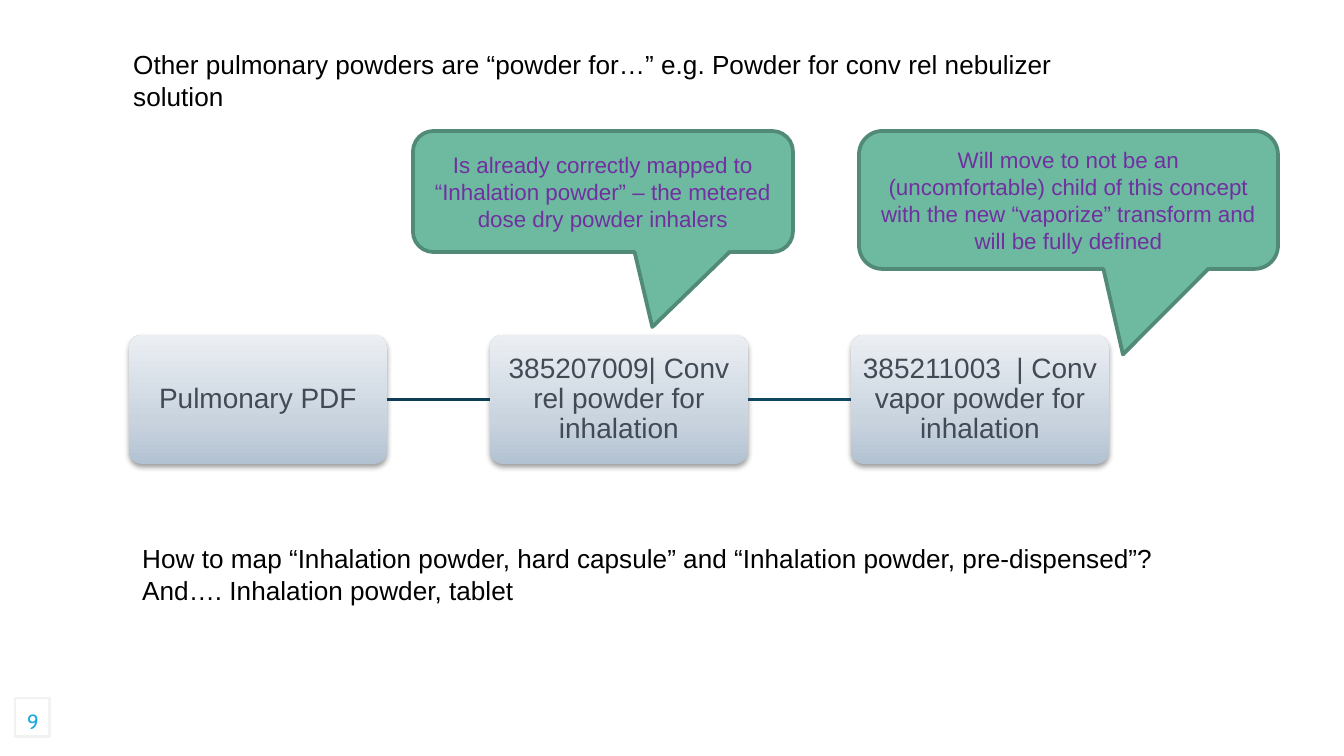
from lxml import etree
from pptx import Presentation
from pptx import util as u
from pptx.dml.color import RGBColor
from pptx.enum import shapes, text
from pptx.oxml import ns, parse_xml

PX = 9144000 / 1344  # EMU per px
WHITE = RGBColor(0xFF, 0xFF, 0xFF)
BLACK = RGBColor(0, 0, 0)
SLATE = RGBColor(0x42, 0x4A, 0x55)
PURPLE = RGBColor(0x70, 0x30, 0xA0)
GREEN = RGBColor(0x6E, 0xBA, 0xA0)
DARK_GREEN = RGBColor(0x51, 0x8A, 0x76)
PALE_GREY = RGBColor(0xF1, 0xF2, 0xF1)
SKY = RGBColor(0x1D, 0xA8, 0xDE)
LINK_COLORS = [RGBColor(0x0E, 0x3E, 0x56), RGBColor(0x10, 0x47, 0x61)]

# Concept chain: equal boxes at an equal pitch
CHAIN = ["Pulmonary PDF",
         "385207009| Conv rel powder for inhalation",
         "385211003\u00a0 | Conv vapor powder for inhalation"]
CHAIN_LEFT, CHAIN_TOP, CHAIN_PITCH = 129, 335, 361
BOX_WIDTH, BOX_HEIGHT = 258, 129
BOX_STOPS = [(0, "B2C2D2"), (35, "CAD4DF"), (100, "EBEFF3")]

CALLOUTS = [
    ((413, 131, 380, 121),
     "Is already correctly mapped to “Inhalation powder” – the metered dose dry powder inhalers"),
    ((859, 131, 419, 138),
     "Will move to not be an (uncomfortable) child of this concept with the new "
     "“vaporize” transform and will be fully defined"),
]
NOTES = [
    ((120, 42, 1043, 78),
     ["Other pulmonary powders are “powder for…” e.g. Powder for conv rel nebulizer solution"]),
    ((129, 536, 1140, 109),
     ["How to map “Inhalation powder, hard capsule” and “Inhalation powder, pre-dispensed”?",
      "And…. Inhalation powder, tablet"]),
]


def px(*lengths):
    return [u.Emu(round(length * PX)) for length in lengths]


def write(shape, lines, size, color, align=text.PP_ALIGN.LEFT, font="Arial",
          anchor=text.MSO_ANCHOR.TOP, insets=None, spacing=None):
    frame = shape.text_frame
    frame.word_wrap = True
    frame.vertical_anchor = anchor
    if insets:
        side, end = px(*insets)
        frame.margin_left = frame.margin_right = side
        frame.margin_top = frame.margin_bottom = end
    frame.text = "\n".join(lines)
    for para in frame.paragraphs:
        para.alignment = align
        if spacing:
            para.line_spacing = spacing
        para.font.name = font
        para.font.size = u.Pt(size)
        para.font.color.rgb = color


def add_panel(page, kind, place, fill=None, line=None, width=0):
    panel = page.shapes.add_shape(kind, *px(*place))
    panel.shadow.inherit = False
    if fill is not None:
        panel.fill.solid()
        panel.fill.fore_color.rgb = fill
    if line is None:
        panel.line.fill.background()
    else:
        panel.line.color.rgb = line
        panel.line.width = u.Pt(width)
    return panel


def add_gradient_and_shadow(box):
    """Upward three-stop gradient and a soft shadow below."""
    stops = "".join(f'<a:gs pos="{pos * 1000}"><a:srgbClr val="{color}"/></a:gs>'
                    for pos, color in BOX_STOPS)
    gradient = parse_xml(f'<a:gradFill {ns.nsdecls("a")} rotWithShape="1"><a:gsLst>{stops}'
                         '</a:gsLst><a:lin ang="16200000" scaled="0"/></a:gradFill>')
    properties = box._element.spPr
    properties.find(ns.qn("a:prstGeom")).addnext(gradient)
    shadow = parse_xml(f'<a:outerShdw {ns.nsdecls("a")} blurRad="{u.Pt(3.1)}" dist="{u.Pt(1.6)}" '
                       'dir="5400000" rotWithShape="0"><a:srgbClr val="000000">'
                       '<a:alpha val="38000"/></a:srgbClr></a:outerShdw>')
    properties.find(ns.qn("a:effectLst")).append(shadow)


def add_concept(page, index, label):
    place = CHAIN_LEFT + index * CHAIN_PITCH, CHAIN_TOP, BOX_WIDTH, BOX_HEIGHT
    box = add_panel(page, shapes.MSO_SHAPE.ROUNDED_RECTANGLE, place)
    box.adjustments[0] = 0.1
    add_gradient_and_shadow(box)
    write(box, [label], 15, SLATE, text.PP_ALIGN.CENTER,
          anchor=text.MSO_ANCHOR.MIDDLE, insets=(2, 2), spacing=0.9)
    return box


def add_link(page, start, end, color):
    link = page.shapes.add_connector(shapes.MSO_CONNECTOR.STRAIGHT, 0, 0, 0, 0)
    link.begin_connect(start, 3)
    link.end_connect(end, 1)
    link.line.color.rgb = color
    link.line.width = u.Pt(2)
    etree.SubElement(link._element.spPr, ns.qn("a:effectLst"))


def add_callout(page, place, label):
    callout = add_panel(page, shapes.MSO_SHAPE.ROUNDED_RECTANGULAR_CALLOUT, place,
                        GREEN, DARK_GREEN, 2)
    for index, value in enumerate((0.13, 1.12, 0.17)):
        callout.adjustments[index] = value
    write(callout, [label], 12, PURPLE, text.PP_ALIGN.CENTER, anchor=text.MSO_ANCHOR.MIDDLE)


def add_note(page, place, lines, size=14, color=BLACK, **style):
    write(page.shapes.add_textbox(*px(*place)), lines, size, color, **style)


def main():
    deck = Presentation()
    deck.slide_width, deck.slide_height = px(1344, 756)
    page = deck.slides.add_slide(deck.slide_layouts[6])

    # Page number
    add_panel(page, shapes.MSO_SHAPE.RECTANGLE, (15, 698, 35, 39), WHITE, PALE_GREY, 1.5)
    add_note(page, (12, 704, 42, 47), ["9"], 11, SKY, align=text.PP_ALIGN.CENTER,
             font="Cabin", insets=(9, 5))

    # Concept chain
    boxes = [add_concept(page, index, label) for index, label in enumerate(CHAIN)]
    for start, end, color in zip(boxes, boxes[1:], LINK_COLORS):
        add_link(page, start, end, color)

    # Remarks on the concepts, and notes above and below
    for place, label in CALLOUTS:
        add_callout(page, place, label)
    for place, lines in NOTES:
        add_note(page, place, lines)

    deck.save("out.pptx")


if __name__ == "__main__":
    main()
